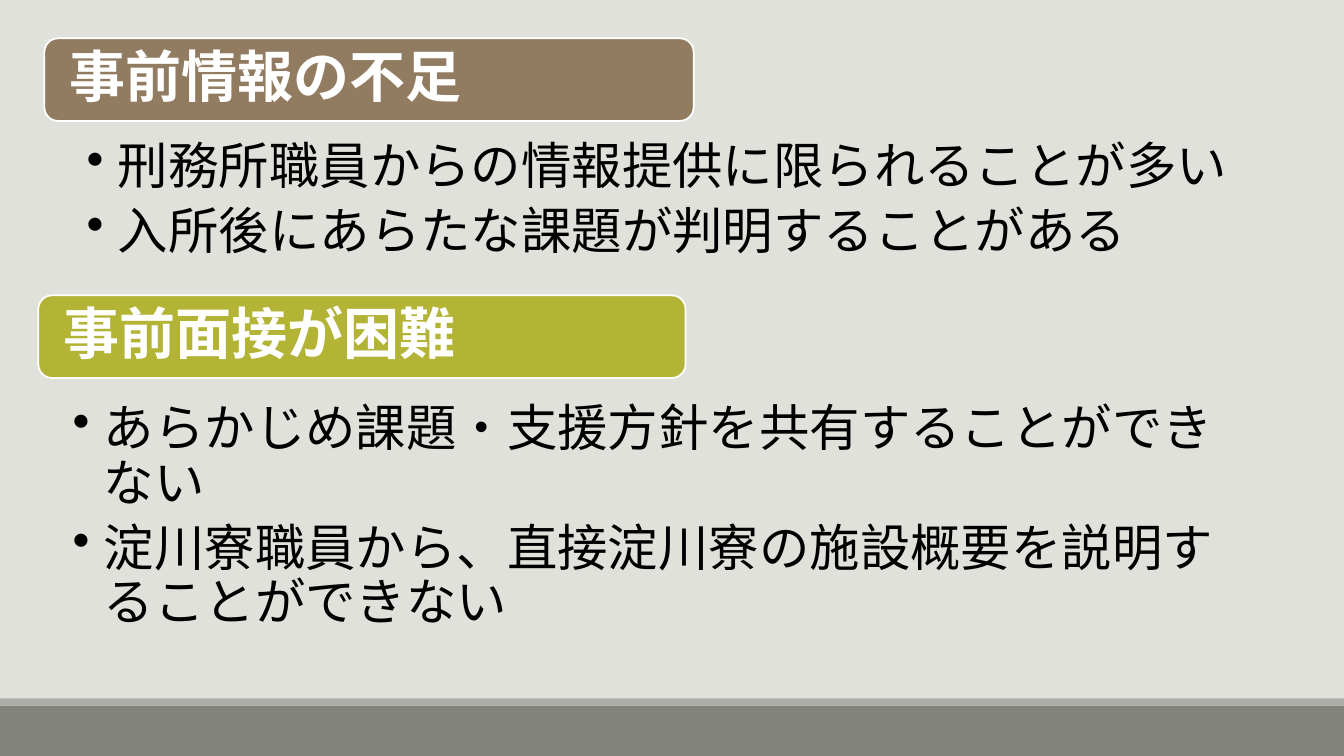
"""Builds a slide of two headed bullet lists on prior information and interviews."""
import pptx
import pptx.dml.color
import pptx.enum.shapes
import pptx.enum.text
import pptx.oxml.ns
import pptx.util
from lxml import etree

Inches = pptx.util.Inches
Pt = pptx.util.Pt
RGBColor = pptx.dml.color.RGBColor
MSO_SHAPE = pptx.enum.shapes.MSO_SHAPE
ANCHOR = pptx.enum.text.MSO_ANCHOR
qn = pptx.oxml.ns.qn

BACKGROUND = RGBColor(0xE1, 0xE1, 0xDB)
FOOTER = RGBColor(0x82, 0x84, 0x7C)
FOOTER_EDGE = RGBColor(0xAC, 0xAD, 0xA8)
BROWN = RGBColor(0x92, 0x7C, 0x61)
OLIVE = RGBColor(0xB3, 0xB4, 0x35)
WHITE = RGBColor(0xFF, 0xFF, 0xFF)
BLACK = RGBColor(0, 0, 0)

SECTIONS = [
    ("事前情報の不足", BROWN, (0.44, 0.38, 6.44, 0.82), (0.47, 1.34, 12.12, 1.88),
     ["刑務所職員からの情報提供に限られることが多い",
      "入所後にあらたな課題が判明することがある"]),
    ("事前面接が困難", OLIVE, (0.38, 2.93, 6.42, 0.82), (0.33, 3.94, 12.25, 2.04),
     ["あらかじめ課題・支援方針を共有することができない",
      "淀川寮職員から、直接淀川寮の施設概要を説明することができない"]),
]


class Deck:
    heading_font, heading_size = "Noto Sans CJK JP", Pt(40)
    body_font, body_size = "Calibri", Pt(36)

    def __init__(self):
        self.prs = pptx.Presentation()
        self.prs.slide_width, self.prs.slide_height = Inches(13.33), Inches(7.5)
        self.s = self.prs.slides.add_slide(self.prs.slide_layouts[6])
        fill = self.s.background.fill
        fill.solid()
        fill.fore_color.rgb = BACKGROUND

    def block(self, kind, box, color):
        sp = self.s.shapes.add_shape(kind, *map(Inches, box))
        sp.shadow.inherit = False
        sp.fill.solid()
        sp.fill.fore_color.rgb = color
        sp.line.fill.background()
        return sp

    def frame(self, sp, left, top, right, anchor):
        tf = sp.text_frame
        tf.word_wrap = True
        tf.vertical_anchor = anchor
        tf.margin_left, tf.margin_right = Inches(left), Inches(right)
        tf.margin_top = tf.margin_bottom = Inches(top)
        return tf

    def add_text(self, p, text, font, size, color, bold=False):
        p.alignment = pptx.enum.text.PP_ALIGN.LEFT
        p.line_spacing = 0.9
        r = p.add_run()
        r.text = text
        r.font.name, r.font.size, r.font.bold = font, size, bold
        r.font.color.rgb = color
        ea = etree.SubElement(r.font._element, qn("a:ea"))
        ea.set("typeface", font)

    def heading(self, text, box, color):
        sp = self.block(MSO_SHAPE.ROUNDED_RECTANGLE, box, color)
        sp.line.color.rgb = WHITE
        sp.line.width = Pt(1.25)
        tf = self.frame(sp, 0.21, 0.21, 0.21, ANCHOR.MIDDLE)
        p = tf.paragraphs[0]
        p.space_after = Pt(14)
        self.add_text(p, text, self.heading_font, self.heading_size, WHITE, True)

    def bullets(self, items, box):
        sp = self.s.shapes.add_textbox(*map(Inches, box))
        tf = self.frame(sp, 0.39, 0.06, 0.36, ANCHOR.TOP)
        for i, item in enumerate(items):
            p = tf.add_paragraph() if i else tf.paragraphs[0]
            p.level = 1
            p.space_after = Pt(7.5)
            self.add_text(p, item, self.body_font, self.body_size, BLACK)
            pPr = p._p.get_or_add_pPr()
            pPr.set("marL", str(Inches(0.31)))
            pPr.set("indent", str(-Inches(0.31)))
            etree.SubElement(pPr, qn("a:buChar")).set("char", "•")


def main():
    deck = Deck()
    deck.block(MSO_SHAPE.RECTANGLE, (0, 7, 13.33, 0.5), FOOTER)
    deck.block(MSO_SHAPE.RECTANGLE, (0, 6.93, 13.33, 0.07), FOOTER_EDGE)
    for title, color, title_box, list_box, items in SECTIONS:
        deck.heading(title, title_box, color)
        deck.bullets(items, list_box)
    deck.prs.save("out.pptx")


if __name__ == "__main__":
    main()
